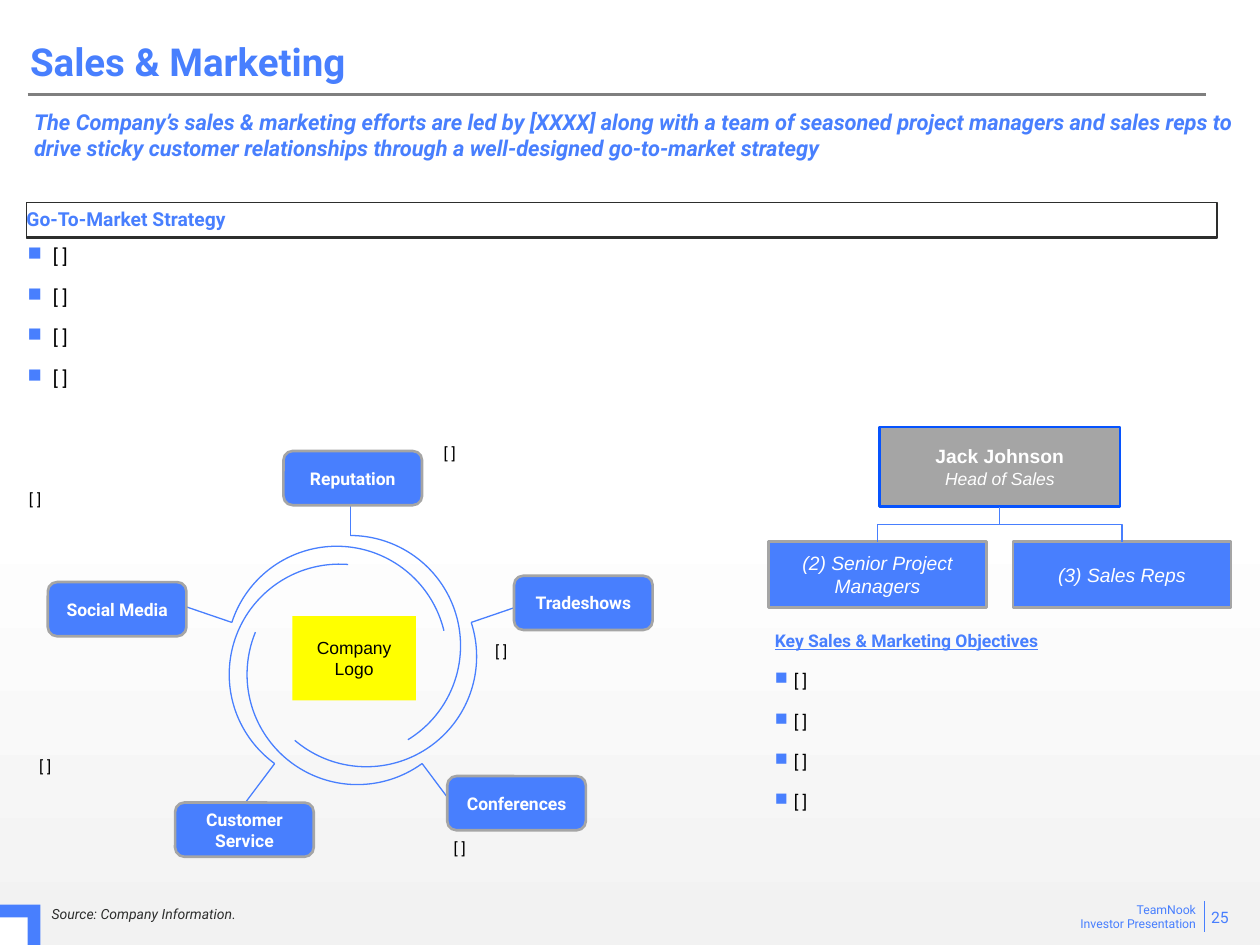
from math import cos, radians, sin

from lxml import etree
from pptx import Presentation
from pptx.dml.color import RGBColor
from pptx.enum.shapes import MSO_CONNECTOR, MSO_SHAPE
from pptx.enum.text import MSO_ANCHOR, PP_ALIGN
from pptx.oxml.ns import qn
from pptx.util import Inches, Pt

COLORS = {name: RGBColor.from_string(value) for name, value in {
    "blue": "487FFE", "deep_blue": "0653FE", "gray": "A5A5A5", "rule": "7F7F7F",
    "ink": "2D2E2D", "black": "000000", "white": "FFFFFF", "pale": "F2F2F2",
    "yellow": "FFFF00"}.items()}
NORMAL = (0.1, 0.05, 0.1, 0.05)
TIGHT = (0.01, 0.01, 0.01, 0.01)
LIST = (0, 0.01, 0, 0)
NONE = (0, 0, 0, 0)

prs = Presentation()
prs.slide_width, prs.slide_height = Inches(10), Inches(7.5)
slide = prs.slides.add_slide(prs.slide_layouts[6])


def add_block(box, lines=(), size=10, color="black", font="Roboto", bold=False,
              italic=False, align=PP_ALIGN.LEFT, anchor=MSO_ANCHOR.TOP, insets=NORMAL,
              shape=None, fill=None, line=None, width=1.5):
    """Add a text box, or a preset shape with text, and return it."""
    position = [Inches(v) for v in box]
    if shape is None:
        block = slide.shapes.add_textbox(*position)
    else:
        block = slide.shapes.add_shape(shape, *position)
        block.shadow.inherit = False
        if fill:
            block.fill.solid()
            block.fill.fore_color.rgb = COLORS[fill]
        else:
            block.fill.background()
        if line:
            block.line.color.rgb = COLORS[line]
            block.line.width = Pt(width)
        else:
            block.line.fill.background()
    frame = block.text_frame
    frame.word_wrap = True
    frame.vertical_anchor = anchor
    (frame.margin_left, frame.margin_top,
     frame.margin_right, frame.margin_bottom) = [Inches(v) for v in insets]
    frame.text = "\n".join(lines)
    for paragraph in frame.paragraphs:
        paragraph.alignment = align
        paragraph.font.size = Pt(size)
        paragraph.font.name = font
        paragraph.font.bold = bold
        paragraph.font.italic = italic
        paragraph.font.color.rgb = COLORS[color]
    return block


def add_line(start, end, color="blue", width=0.75, kind=MSO_CONNECTOR.STRAIGHT):
    """Add a connector without a shadow and return it."""
    line = slide.shapes.add_connector(kind, *[Inches(v) for v in (*start, *end)])
    line.line.color.rgb = COLORS[color]
    line.line.width = Pt(width)
    etree.SubElement(line._element.spPr, qn("a:effectLst"))
    return line


# Background: white fading to pale gray in the lower half
background = slide.background.fill
background.gradient()
background.gradient_angle = 270
for stop, place, color in zip(background.gradient_stops, (0.53, 1), ("white", "pale")):
    stop.position = place
    stop.color.rgb = COLORS[color]

# Footer and corner mark
add_block((8.43, 7.11, 1.16, 0.34), ["TeamNook", "Investor Presentation"], 7, "blue",
          align=PP_ALIGN.RIGHT)
add_line((9.56, 7.15), (9.56, 7.4))
add_block((9.1, 7.16, 0.75, 0.24), ["25"], 9, "blue", align=PP_ALIGN.RIGHT,
          anchor=MSO_ANCHOR.MIDDLE)
add_block((0, 7.18, 0.32, 0.32), shape=MSO_SHAPE.RECTANGLE, fill="blue")
add_block((0, 7.28, 0.22, 0.22), shape=MSO_SHAPE.RECTANGLE, fill="white")
add_block((0.41, 7.18, 7.34, 0.14), ["Source: Company Information."], 8, "ink",
          italic=True, anchor=MSO_ANCHOR.BOTTOM, insets=NONE)

# Title and headline
title = add_block((0.14, 0.25, 7.88, 0.47), ["Sales & Marketing"], 22, "blue", bold=True,
                  anchor=MSO_ANCHOR.BOTTOM)
title.text_frame.paragraphs[0].line_spacing = 0.9
add_line((0.22, 0.75), (9.57, 0.75), "rule", 1.5)
add_block((0.24, 0.86, 9.62, 0.49),
          ["The Company’s sales & marketing efforts are led by [XXXX] along with a team of "
           "seasoned project managers and sales reps to drive sticky customer relationships "
           "through a well-designed go-to-market strategy"],
          12.5, "blue", bold=True, italic=True, insets=(0.03, 0, 0, 0))

# Go-to-market strategy
add_block((0.21, 1.61, 9.45, 0.28), ["Go-To-Market Strategy"], 11, "blue", bold=True,
          anchor=MSO_ANCHOR.BOTTOM, insets=(0, 0, 0, 0.06),
          shape=MSO_SHAPE.RECTANGLE, line="ink", width=0.75)
add_line((0.21, 1.88), (9.65, 1.88), "ink")
strategy = add_block((0.21, 1.93, 9.45, 1.18), ["[ ]"] * 4, 11, insets=LIST)

# Key objectives
objectives = add_block((6.1, 4.99, 3.67, 1.47),
                       ["Key Sales & Marketing Objectives"] + ["[ ]"] * 4, insets=LIST)
heading, *goals = objectives.text_frame.paragraphs
heading.font.bold = heading.font.underline = True
heading.font.color.rgb = COLORS["blue"]
heading._p.get_or_add_pPr().set("marL", str(Inches(0.05)))

# Square bullets for both lists
for points, margin, hang, gap in ((strategy.text_frame.paragraphs, 0.21, 0.2, 10),
                                  (goals, 0.2, 0.15, 11)):
    for index, point in enumerate(points):
        if index or points is goals:
            point.space_before = Pt(gap)
        props = point._p.get_or_add_pPr()
        props.set("marL", str(Inches(margin)))
        props.set("indent", str(-Inches(hang)))
        bullet = etree.Element(qn("a:buChar"), char="■")
        bullet_color = etree.Element(qn("a:buClr"))
        etree.SubElement(bullet_color, qn("a:srgbClr"), val=str(COLORS["blue"]))
        default_run = props.find(qn("a:defRPr"))
        default_run.addprevious(bullet_color)
        default_run.addprevious(bullet)

# Sales team chart
head = add_block((6.98, 3.39, 1.91, 0.63), ["Jack Johnson", "Head of Sales"], 11, "white",
                 "Arial", bold=True, align=PP_ALIGN.CENTER, anchor=MSO_ANCHOR.MIDDLE,
                 shape=MSO_SHAPE.RECTANGLE, fill="gray", line="deep_blue")
role = head.text_frame.paragraphs[1].font
role.size, role.bold, role.italic = Pt(10), False, True
for left, team in ((6.1, "(2) Senior Project Managers"), (8.04, "(3) Sales Reps")):
    add_block((left, 4.3, 1.73, 0.52), [team], 11, "white", "Arial", italic=True,
              align=PP_ALIGN.CENTER, anchor=MSO_ANCHOR.MIDDLE,
              shape=MSO_SHAPE.RECTANGLE, fill="blue", line="gray")
# Elbows are laid out sideways, then turned to run downwards
for start, end, turn in (((8.56, 3.68), (8.28, 4.65), 270), ((7.31, 3.68), (7.59, 4.65), 90)):
    elbow = add_line(start, end, kind=MSO_CONNECTOR.ELBOW)
    elbow._element.spPr.find(qn("a:xfrm")).set("rot", str(turn * 60000))

# Channel wheel: each arc starts at its spoke and is turned a fifth further
RADIUS = 0.875
channels = [  # name, box corner, arc start, spoke end, insets
    ("Reputation", (2.25, 3.58), (2.78, 4.25), (2.78, 4), NORMAL),
    ("Tradeshows", (4.08, 4.57), (3.74, 4.94), (4.12, 4.81), TIGHT),
    ("Conferences", (3.55, 6.16), (3.35, 6.06), (3.59, 6.38), TIGHT),
    ("Customer Service", (1.39, 6.37), (2.18, 6.06), (1.94, 6.38), TIGHT),
    ("Social Media", (0.38, 4.62), (1.84, 4.94), (1.46, 4.81), TIGHT),
]
for index, (channel, corner, start, spoke_end, insets) in enumerate(channels):
    turn = 72 * index
    center_x = start[0] - RADIUS * sin(radians(turn))
    center_y = start[1] + RADIUS * cos(radians(turn))
    arc = add_block((center_x - RADIUS, center_y - RADIUS, 2 * RADIUS, 2 * RADIUS),
                    shape=MSO_SHAPE.ARC, line="blue", width=0.75)
    arc.adjustments[0], arc.adjustments[1] = 270 * 0.6, 58.5 * 0.6
    arc.rotation = turn
    add_line(start, spoke_end)
    label = add_block((*corner, 1.1, 0.43), [channel], 10, "white", bold=True,
                      align=PP_ALIGN.CENTER, anchor=MSO_ANCHOR.MIDDLE, insets=insets,
                      shape=MSO_SHAPE.ROUNDED_RECTANGLE, fill="blue", line="gray")
    label.adjustments[0] = 0.17

# Channel notes
for left, top, width in ((3.47, 3.51, 1.91), (3.88, 5.08, 1.91), (3.55, 6.65, 2.23),
                         (0.18, 3.88, 1.68), (0.26, 6, 1.75)):
    add_block((left, top, width, 0.17), ["[ ]"], 9, insets=(0.05, 0.01, 0, 0))

# Wheel hub
add_block((2.32, 4.89, 0.98, 0.67), ["Company Logo"], 10, font="Arial",
          align=PP_ALIGN.CENTER, anchor=MSO_ANCHOR.MIDDLE,
          shape=MSO_SHAPE.RECTANGLE, fill="yellow")

prs.save("out.pptx")
